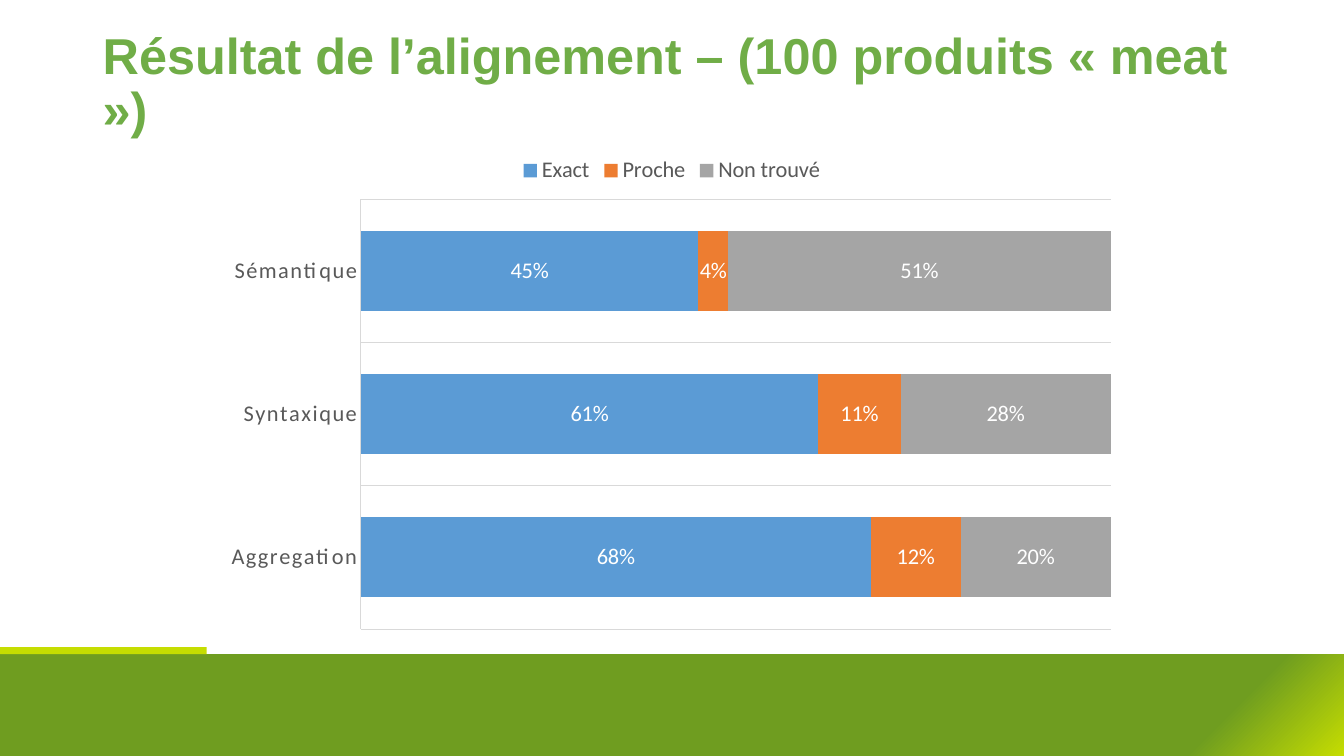
from lxml import etree
from pptx import Presentation
from pptx.chart.data import CategoryChartData
from pptx.dml.color import RGBColor
from pptx.enum.chart import (XL_CHART_TYPE as ChartType, XL_LABEL_POSITION as LabelPosition,
                             XL_LEGEND_POSITION as LegendPosition, XL_TICK_MARK as TickMark)
from pptx.enum.shapes import MSO_SHAPE as Shape
from pptx.enum.text import MSO_ANCHOR as Anchor
from pptx.oxml import parse_xml
from pptx.oxml.ns import nsdecls, qn
from pptx.util import Pt

# Content
TITLE = "Résultat de l’alignement – (100 produits « meat »)"
METHODS = ["Aggregation", "Syntaxique", "Sémantique"]
RESULTS = [
    ("Exact", "5B9BD5", [0.68, 0.61, 0.45]),
    ("Proche", "ED7D31", [0.12, 0.11, 0.04]),
    ("Non trouvé", "A5A5A5", [0.2, 0.28, 0.51]),
]
LIME, GREEN, GRAY, RULE = "C5DD01", "6F9D20", "595959", "D9D9D9"

# Layout in points: left, top, width, height
BAND = (0, 467.28, 960, 72.72)
ACCENT = (0, 462.24, 147.6, 5.04)
TITLE_BOX = (66.24, 28.8, 828, 64.08)
CHART_BOX = (153.36, 103.68, 653.04, 352.8)
PLOT = {"x": 0.16, "y": 0.11, "w": 0.82, "h": 0.87}  # shares of the chart


def color(value):
    return RGBColor.from_string(value)


def points(box):
    return [Pt(length) for length in box]


def style_font(font, size, value, name="Calibri"):
    font.size, font.name = Pt(size), name
    font.color.rgb = color(value)


def style_line(line):
    line.width = Pt(0.75)
    line.color.rgb = color(RULE)


def add_bar(page, box, value):
    bar = page.shapes.add_shape(Shape.RECTANGLE, *points(box))
    bar.shadow.inherit = False
    bar.fill.solid()
    bar.fill.fore_color.rgb = color(value)
    bar.line.fill.background()
    return bar


deck = Presentation()
deck.slide_width, deck.slide_height = Pt(960), Pt(540)
page = deck.slides.add_slide(deck.slide_layouts[6])

# Footer band, glowing from its bottom right corner
band = add_bar(page, BAND, GREEN)
stops = "".join(f'<a:gs pos="{share * 1000}"><a:srgbClr val="{value}"/></a:gs>'
                for share, value in [(0, LIME), (11, GREEN), (100, GREEN)])
glow = parse_xml(
    f'<a:gradFill {nsdecls("a")} rotWithShape="1"><a:gsLst>{stops}</a:gsLst>'
    '<a:path path="circle"><a:fillToRect l="100000" t="100000"/></a:path></a:gradFill>')
solid = band.element.spPr.find(qn("a:solidFill"))
solid.getparent().replace(solid, glow)
add_bar(page, ACCENT, LIME)

# Title
box = page.shapes.add_textbox(*points(TITLE_BOX))
frame = box.text_frame
frame.word_wrap = True
frame.vertical_anchor = Anchor.MIDDLE
para = frame.paragraphs[0]
para.text = TITLE
para.line_spacing = 0.9
para.font.bold = True
style_font(para.font, 36, "70AD47", "Arial")

# Chart
data = CategoryChartData(number_format="0%")
data.categories = METHODS
for name, _, shares in RESULTS:
    data.add_series(name, shares)
chart = page.shapes.add_chart(ChartType.BAR_STACKED_100, *points(CHART_BOX), data).chart
chart.has_title = False
style_font(chart.font, 16, "000000")

chart.has_legend = True
chart.legend.position = LegendPosition.TOP
chart.legend.include_in_layout = False
style_font(chart.legend.font, 16, GRAY)

# Axes
methods_axis = chart.category_axis
methods_axis.major_tick_mark = methods_axis.minor_tick_mark = TickMark.NONE
methods_axis.has_major_gridlines = True
style_line(methods_axis.major_gridlines.format.line)
style_line(methods_axis.format.line)
style_font(methods_axis.tick_labels.font, 16, GRAY)
chart_xml = chart._chartSpace
chart_xml.xpath(".//c:catAx/c:txPr//a:defRPr")[0].set("spc", "120")

shares_axis = chart.value_axis
shares_axis.has_major_gridlines = False
shares_axis.tick_labels.number_format = "0%"
shares_axis.tick_labels.number_format_is_linked = False
shares_axis.visible = False

# Bars and their labels
plot = chart.plots[0]
plot.gap_width, plot.overlap = 79, 100
plot.vary_by_categories = False
for series, (_, value, _) in zip(plot.series, RESULTS):
    series.format.fill.solid()
    series.format.fill.fore_color.rgb = color(value)
    labels = series.data_labels
    labels.show_value = True
    labels.position = LabelPosition.CENTER
    labels.number_format = "0%"
    labels.number_format_is_linked = False
    style_font(labels.font, 16, "FFFFFF")

# Fixed plot area
area = chart_xml.xpath(".//c:plotArea")[0]
for old in area.findall(qn("c:layout")):
    area.remove(old)
layout = etree.Element(qn("c:layout"))
manual = etree.SubElement(layout, qn("c:manualLayout"))
settings = {"layoutTarget": "inner", "xMode": "edge", "yMode": "edge", **PLOT}
for tag, setting in settings.items():
    etree.SubElement(manual, qn(f"c:{tag}")).set("val", str(setting))
area.insert(0, layout)

deck.save("out.pptx")
